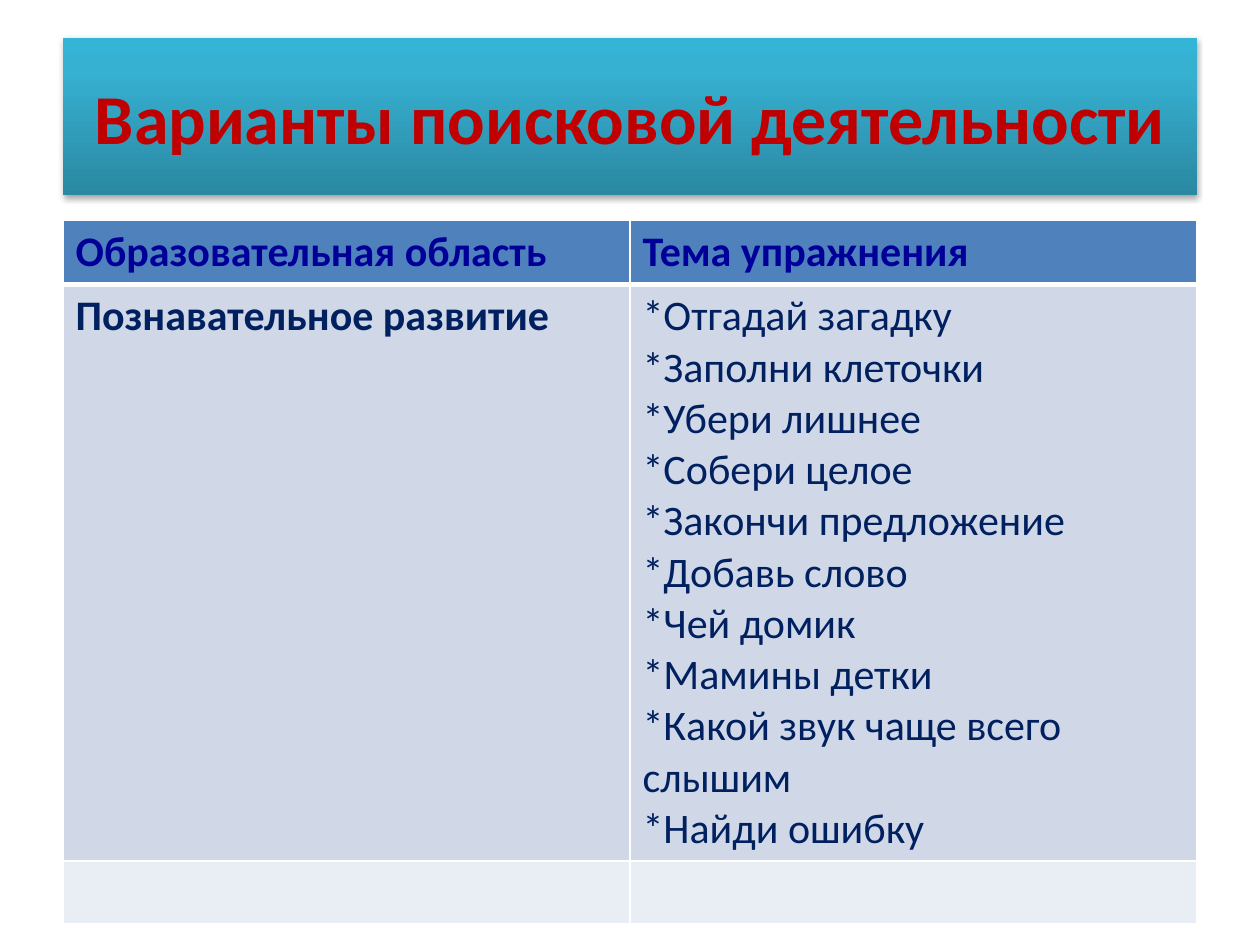
from dataclasses import dataclass

from lxml import etree
from pptx import Presentation
from pptx.dml.color import RGBColor
from pptx.enum import text
from pptx.oxml import ns, parse_xml
from pptx.util import Cm, Pt

FONT = "Calibri"
NAVY = "002060"
LEFT, WIDTH = Cm(1.27), Cm(22.86)


@dataclass
class Cell:
    lines: list[str]
    color: str = NAVY
    bold: bool = True


@dataclass
class Row:
    height: float
    fill: str
    cells: list[Cell]
    top_border: float = 1
    bottom_border: float = 1


EXERCISES = [
    "*Отгадай загадку",
    "*Заполни клеточки",
    "*Убери лишнее",
    "*Собери целое",
    "*Закончи предложение",
    "*Добавь слово",
    "*Чей домик",
    "*Мамины детки",
    "*Какой звук чаще всего слышим",
    "*Найди ошибку",
]
ROWS = [
    Row(1.27, "4F81BD", [Cell(["Образовательная область"], "000099"),
                         Cell(["Тема упражнения"], "000099")], bottom_border=3),
    Row(11.6, "D0D8E8", [Cell(["Познавательное развитие"]),
                         Cell(EXERCISES, bold=False)], top_border=3),
    Row(1.27, "E9EDF4", [Cell([]), Cell([])]),
]


def rgb(value: str) -> RGBColor:
    return RGBColor.from_string(value)


def add_run(paragraph, words: str, size: float, color: str, bold: bool) -> None:
    run = paragraph.add_run()
    run.text = words
    run.font.name = FONT
    run.font.size = Pt(size)
    run.font.bold = bold
    run.font.color.rgb = rgb(color)


def add_gradient_and_shadow(shape, stops: list[tuple[int, str]]) -> None:
    """Give the shape an upward gradient and a soft shadow below it."""
    stop_xml = "".join(
        f'<a:gs pos="{percent * 1000}"><a:srgbClr val="{color}"/></a:gs>'
        for percent, color in stops)
    properties = shape._element.spPr
    properties.append(parse_xml(
        f'<a:gradFill {ns.nsdecls("a")} rotWithShape="1"><a:gsLst>{stop_xml}</a:gsLst>'
        '<a:lin ang="16200000" scaled="0"/></a:gradFill>'))
    properties.append(parse_xml(
        f'<a:effectLst {ns.nsdecls("a")}>'
        f'<a:outerShdw blurRad="{Pt(3.1)}" dist="{Pt(1.8)}" dir="5400000" rotWithShape="0">'
        '<a:srgbClr val="000000"><a:alpha val="35000"/></a:srgbClr>'
        '</a:outerShdw></a:effectLst>'))


def add_borders(cell, top: float, bottom: float) -> None:
    properties = cell._tc.get_or_add_tcPr()
    for index, (side, width) in enumerate(
            [("L", 1), ("R", 1), ("T", top), ("B", bottom)]):
        line = etree.Element(ns.qn(f"a:ln{side}"), w=str(Pt(width)))
        fill = etree.SubElement(line, ns.qn("a:solidFill"))
        etree.SubElement(fill, ns.qn("a:srgbClr"), val="FFFFFF")
        properties.insert(index, line)


def format_title(title) -> None:
    title.left, title.top, title.width, title.height = LEFT, Cm(0.76), WIDTH, Cm(3.18)
    add_gradient_and_shadow(title, [(0, "2A88A2"), (80, "37B1D2"), (100, "34B4D6")])
    title.text_frame.vertical_anchor = text.MSO_ANCHOR.MIDDLE
    paragraph = title.text_frame.paragraphs[0]
    paragraph.alignment = text.PP_ALIGN.CENTER
    add_run(paragraph, "Варианты поисковой деятельности", 40, "C00000", True)


def fill_cell(cell, content: Cell, row: Row) -> None:
    cell.fill.solid()
    cell.fill.fore_color.rgb = rgb(row.fill)
    add_borders(cell, row.top_border, row.bottom_border)
    frame = cell.text_frame
    for index, line in enumerate(content.lines):
        paragraph = frame.add_paragraph() if index else frame.paragraphs[0]
        add_run(paragraph, line, 24, content.color, content.bold)


def add_exercise_table(slide, rows: list[Row]) -> None:
    height = Cm(sum(row.height for row in rows))
    table = slide.shapes.add_table(
        len(rows), len(rows[0].cells), LEFT, Cm(4.45), WIDTH, height).table
    for row_index, row in enumerate(rows):
        table.rows[row_index].height = Cm(row.height)
        for column_index, content in enumerate(row.cells):
            fill_cell(table.cell(row_index, column_index), content, row)


def main() -> None:
    presentation = Presentation()
    presentation.slide_width, presentation.slide_height = Cm(25.4), Cm(19.05)
    slide = presentation.slides.add_slide(presentation.slide_layouts[5])
    format_title(slide.shapes.title)
    add_exercise_table(slide, ROWS)
    presentation.save("out.pptx")


if __name__ == "__main__":
    main()
